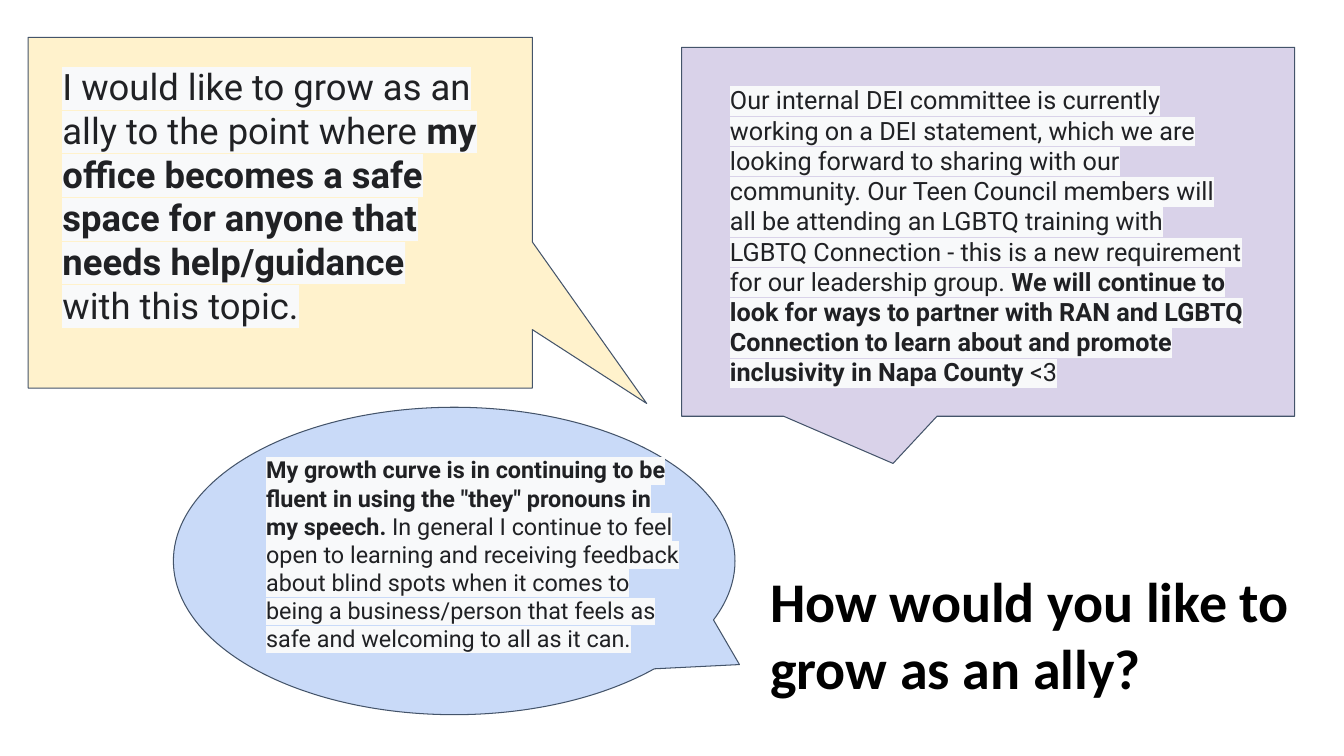
from pptx import Presentation
from pptx.dml.color import RGBColor
from pptx.enum.shapes import MSO_SHAPE as Shape
from pptx.enum.text import MSO_ANCHOR as Anchor, MSO_AUTO_SIZE as Fit
from pptx.oxml.ns import qn
from pptx.util import Inches, Pt
from lxml import etree


def color(code):
    return RGBColor.from_string(code)


class Board:
    edge = "44546A"
    ink = "202124"
    mark = "F8F9FA"
    inset = Inches(0.13)

    def __init__(self, slide):
        self.slide = slide

    def bubble(self, kind, box, fill, tip):
        """Add a speech callout; tip holds its adjustments."""
        shape = self.slide.shapes.add_shape(kind, *map(Inches, box))
        for i, value in enumerate(tip):
            shape.adjustments[i] = value
        shape.shadow.inherit = False
        shape.fill.solid()
        shape.fill.fore_color.rgb = color(fill)
        shape.line.color.rgb = color(self.edge)
        shape.line.width = Pt(0.75)

    def frame(self, box):
        text = self.slide.shapes.add_textbox(*map(Inches, box)).text_frame
        text.word_wrap = True
        text.margin_left = text.margin_right = self.inset
        text.margin_top = text.margin_bottom = self.inset
        return text

    def run(self, para, words, face, size, ink, bold):
        run = para.add_run()
        run.text = words
        font = run.font
        font.name, font.size, font.bold = face, Pt(size), bold
        font.color.rgb = color(ink)
        return run

    def highlight(self, run):
        fill = run.font._element.find(qn("a:solidFill"))
        light = etree.Element(qn("a:highlight"))
        etree.SubElement(light, qn("a:srgbClr"), val=self.mark)
        fill.addnext(light)

    def quote(self, box, size, parts):
        """Add highlighted text from (words, bold) parts."""
        text = self.frame(box)
        text.auto_size = Fit.SHAPE_TO_FIT_TEXT
        for words, bold in parts:
            run = self.run(text.paragraphs[0], words, "Roboto", size, self.ink, bold)
            self.highlight(run)

    def title(self, box, words):
        text = self.frame(box)
        text.vertical_anchor = Anchor.BOTTOM
        self.run(text.paragraphs[0], words, "Calibri", 40, "000000", True)


def main():
    deck = Presentation()
    deck.slide_width, deck.slide_height = Inches(13.33), Inches(7.5)
    board = Board(deck.slides.add_slide(deck.slide_layouts[6]))

    board.bubble(Shape.RECTANGULAR_CALLOUT, (0.28, 0.37, 5, 3.48), "FFF2CC", (0.727, 0.544))
    board.bubble(Shape.ROUNDED_RECTANGULAR_CALLOUT, (6.76, 0.47, 6.08, 3.66), "D9D2E9",
                 (-0.155, 0.628, 0))
    board.bubble(Shape.OVAL_CALLOUT, (1.72, 4.04, 5.57, 3.05), "C9DAF8", (0.508, 0.337))

    board.title((7.51, 5.36, 5.82, 1.72), "How would you like to grow as an ally?")
    board.quote((0.49, 0.51, 4.37, 3.33), 26, [
        ("I would like to grow as an ally to the point where ", False),
        ("my office becomes a safe space for anyone that needs help/guidance", True),
        (" with this topic.", False),
    ])
    board.quote((7.11, 0.71, 5.35, 3.3), 18, [
        ("Our internal DEI committee is currently working on a DEI statement, which we are "
         "looking forward to sharing with our community. Our Teen Council members will all be "
         "attending an LGBTQ training with LGBTQ Connection - this is a new requirement for "
         "our leadership group. ", False),
        ("We will continue to look for ways to partner with RAN and LGBTQ Connection to learn "
         "about and promote inclusivity in Napa County", True),
        (" <3", False),
    ])
    board.quote((2.51, 4.39, 4.37, 2.23), 16.7, [
        ('My growth curve is in continuing to be fluent in using the "they" pronouns in my '
         "speech.", True),
        (" In general I continue to feel open to learning and receiving feedback about blind "
         "spots when it comes to being a business/person that feels as safe and welcoming to "
         "all as it can.", False),
    ])
    deck.save("out.pptx")


if __name__ == "__main__":
    main()
